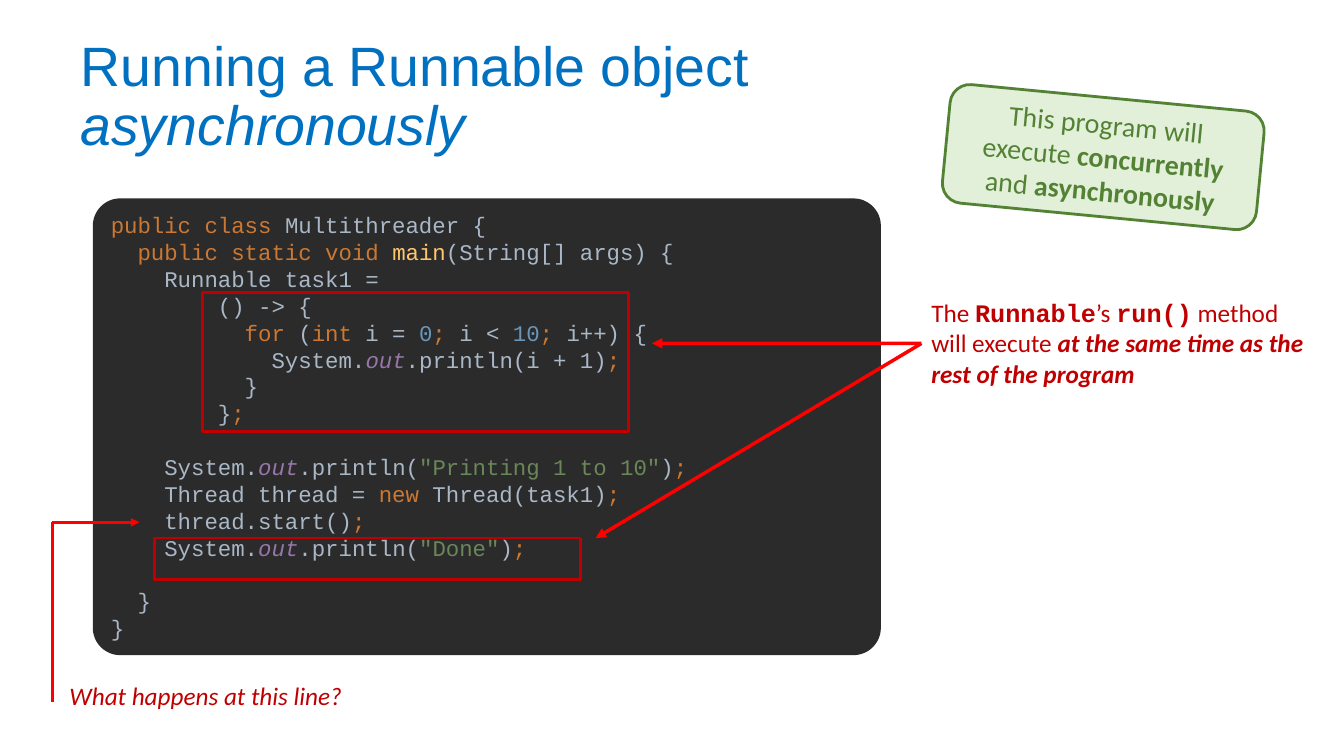
from pptx import Presentation
from pptx.dml.color import RGBColor
from pptx.enum.shapes import MSO_CONNECTOR as Link, MSO_SHAPE as Kind
from pptx.enum.text import MSO_ANCHOR as Anchor, PP_ALIGN as Align
from pptx.oxml.ns import qn
from pptx.util import Cm, Pt
from lxml.etree import SubElement as sub

BLUE = RGBColor(0x00, 0x70, 0xC0)
RED = RGBColor(0xFF, 0x00, 0x00)
WINE = RGBColor(0xC0, 0x00, 0x00)
GREEN = RGBColor(0x54, 0x82, 0x35)
MINT = RGBColor(0xE2, 0xF0, 0xD9)
DARK = RGBColor(0x2B, 0x2B, 0x2B)
PLAIN = RGBColor(0xA9, 0xB7, 0xC6)
KEY = RGBColor(0xCC, 0x78, 0x32)
FUNC = RGBColor(0xFF, 0xC6, 0x6D)
NUM = RGBColor(0x68, 0x97, 0xBB)
FIELD = RGBColor(0x98, 0x76, 0xAA)
QUOTE = RGBColor(0x6A, 0x87, 0x59)

MONO = "Courier New"
PITCH = Pt(19.2)
END = (";", KEY)
OUT = ("out", FIELD)

BLOCKS = [
    [
        [("public class ", KEY), ("Multithreader {", PLAIN)],
        [("  public static void ", KEY), ("main", FUNC), ("(String[] args) {", PLAIN)],
        [("    Runnable task1 =", PLAIN)],
        [("        () -> {", PLAIN)],
        [("          for ", KEY), ("(", PLAIN), ("int ", KEY), ("i = ", PLAIN),
         ("0", NUM), ("; ", KEY), ("i < ", PLAIN), ("10", NUM), ("; ", KEY),
         ("i++) {", PLAIN)],
        [("            System.", PLAIN), OUT, (".println(i + 1)", PLAIN), END],
        [("          }", PLAIN)],
        [("        }", PLAIN), END],
    ],
    [
        [("    System.", PLAIN), OUT, (".println(", PLAIN),
         ('"Printing 1 to 10"', QUOTE), (")", PLAIN), END],
        [("    Thread thread = ", PLAIN), ("new ", KEY), ("Thread(task1)", PLAIN), END],
        [("    thread.start()", PLAIN), END],
        [("    System.", PLAIN), OUT, (".println(", PLAIN),
         ('"Done"', QUOTE), (")", PLAIN), END],
    ],
    [
        [("  }", PLAIN)],
        [("}", PLAIN)],
    ],
]


def style(run, size, color, face="Calibri", bold=False, slant=False):
    font = run.font
    font.size, font.name = Pt(size), face
    font.bold, font.italic = bold, slant
    font.color.rgb = color


def write(para, parts, size, color):
    for text, *look in parts:
        run = para.add_run()
        run.text = text
        style(run, size, color, *look)


def add_box(slide, *rect):
    box = slide.shapes.add_textbox(*map(Cm, rect))
    box.text_frame.word_wrap = True
    return box


def add_block(slide, kind, rect, fill=None, edge=None):
    block = slide.shapes.add_shape(kind, *map(Cm, rect))
    block.shadow.inherit = False
    if fill is None:
        block.fill.background()
    else:
        block.fill.solid()
        block.fill.fore_color.rgb = fill
    if edge is None:
        block.line.fill.background()
    else:
        block.line.color.rgb = edge
        block.line.width = Pt(2)
    return block


def add_line(slide, start, end, width, head=True):
    line = slide.shapes.add_connector(Link.STRAIGHT, *map(Cm, start + end))
    line.line.color.rgb = RED
    line.line.width = Pt(width)
    if head:
        sub(line.line._get_or_add_ln(), qn("a:tailEnd"), type="triangle")
    sub(line._element.spPr, qn("a:effectLst"))
    return line


def add_title(slide):
    frame = add_box(slide, 1.78, 0.97, 20.42, 3).text_frame
    frame.vertical_anchor = Anchor.MIDDLE
    para = frame.paragraphs[0]
    para.text = "Running a Runnable object\vasynchronously"
    para.line_spacing = 0.9
    for run, slant in zip(para.runs, (False, True)):
        style(run, 39.6, BLUE, "Arial", slant=slant)


def add_code(slide):
    panel = add_block(slide, Kind.ROUNDED_RECTANGLE, (2.34, 5, 19.86, 11.51), DARK)
    panel.adjustments[0] = 0.06
    frame = panel.text_frame
    frame.vertical_anchor = Anchor.TOP
    for b, block in enumerate(BLOCKS):
        for n, row in enumerate(block):
            para = frame.add_paragraph() if b or n else frame.paragraphs[0]
            para.alignment = Align.LEFT
            para.line_spacing = PITCH
            if b and not n:
                para.space_before = PITCH
            for text, color in row:
                write(para, [(text, MONO, False, color == FIELD)], 16, color)


def add_note(slide):
    note = add_box(slide, 23.22, 7.37, 10.06, 2.57)
    write(note.text_frame.paragraphs[0], [
        ("The ",), ("Runnable", MONO, True), ("’s ",), ("run()", MONO, True),
        (" method will execute ",),
        ("at the same time as the rest of the program", "Calibri", True, True),
    ], 18, WINE)
    return note


def add_badge(slide):
    badge = add_block(slide, Kind.ROUNDED_RECTANGLE, (23.83, 2.46, 7.95, 3), MINT, GREEN)
    badge.rotation = 5.5
    frame = badge.text_frame
    frame.word_wrap = True
    frame.vertical_anchor = Anchor.MIDDLE
    para = frame.paragraphs[0]
    para.alignment = Align.CENTER
    write(para, [
        ("This program will execute ",), ("concurrently ", "Calibri", True),
        ("and",), (" asynchronously", "Calibri", True),
    ], 20, GREEN)


def add_query(slide):
    para = add_box(slide, 1.5, 17.02, 7.92, 1.02).text_frame.paragraphs[0]
    para.text = "What happens at this line?"
    style(para.runs[0], 18, WINE, slant=True)


def main():
    deck = Presentation()
    deck.slide_width, deck.slide_height = Cm(33.87), Cm(19.05)
    slide = deck.slides.add_slide(deck.slide_layouts[6])
    add_title(slide)
    add_code(slide)
    note = add_note(slide)
    add_badge(slide)
    for rect in ((5.11, 7.37, 10.74, 3.51), (3.89, 13.56, 10.74, 1.04)):
        add_block(slide, Kind.RECTANGLE, rect, edge=WINE)
    for tip in ((16.43, 8.65), (15.01, 13.56)):
        add_line(slide, (23.22, 8.65), tip, 2.5).begin_connect(note, 1)
    bend = (1.32, 13.16)
    add_line(slide, bend, (3.51, 13.16), 2)
    add_line(slide, bend, (1.32, 17.7), 2, head=False)
    add_query(slide)
    deck.save("out.pptx")


if __name__ == "__main__":
    main()
